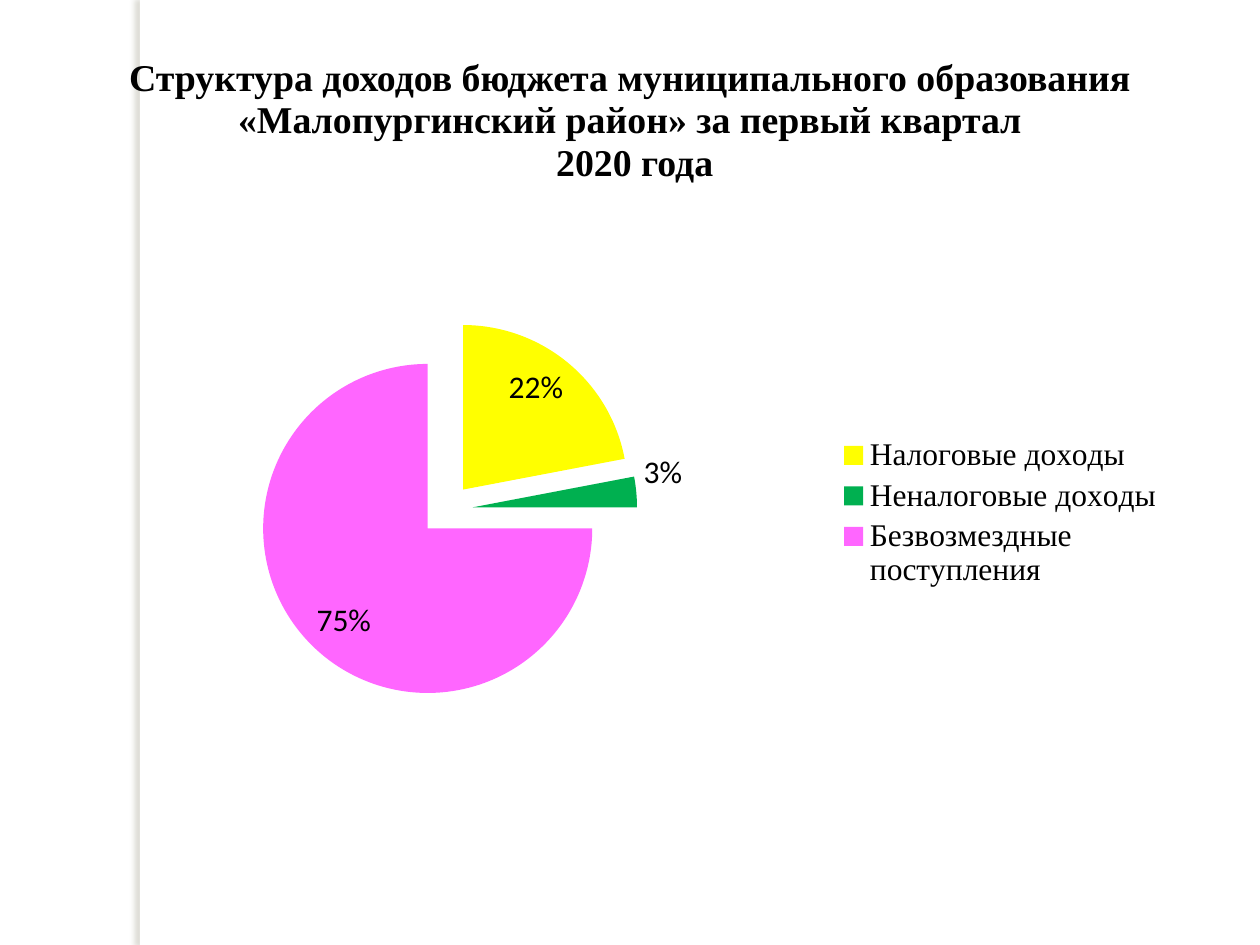
from dataclasses import dataclass

from lxml import etree
from pptx import Presentation
from pptx.chart.data import CategoryChartData
from pptx.dml.color import RGBColor
from pptx.enum.chart import XL_CHART_TYPE as ChartType
from pptx.enum.chart import XL_LABEL_POSITION as LabelPosition
from pptx.enum.chart import XL_LEGEND_POSITION as LegendPosition
from pptx.enum.shapes import MSO_SHAPE as ShapeKind
from pptx.enum.text import MSO_ANCHOR as Anchor
from pptx.enum.text import MSO_AUTO_SIZE as AutoSize
from pptx.enum.text import PP_ALIGN as Align
from pptx.oxml import parse_xml
from pptx.oxml.ns import nsdecls, qn
from pptx.util import Emu, Pt

EMU_PER_PX = 914400 / 126


def px(length):
    return Emu(round(length * EMU_PER_PX))


@dataclass(frozen=True)
class Theme:
    paper: str = "FFFFFF"
    ink: str = "000000"
    shade: str = "7F7D63"
    slices: tuple = ("FFFF00", "00B050", "FF66FF")
    heading_font: str = "Times New Roman"
    chart_font: str = "Calibri"
    title_size: float = 21.6
    chart_size: int = 18


class SlideBuilder:
    def __init__(self, slide, theme):
        self.slide = slide
        self.theme = theme

    def style_font(self, font, name, size, bold=False):
        font.name = name
        font.size = Pt(size)
        font.bold = bold
        font.color.rgb = RGBColor.from_string(self.theme.ink)

    def place(self, shape, left, top, width, height):
        shape.left, shape.top = px(left), px(top)
        shape.width, shape.height = px(width), px(height)

    def edge_strip(self, left, top, width, height):
        shapes = self.slide.shapes
        strip = shapes.add_shape(
            ShapeKind.RECTANGLE, px(left), px(top), px(width), px(height))
        strip.fill.solid()
        strip.fill.fore_color.rgb = RGBColor.from_string(self.theme.paper)
        strip.line.fill.background()
        properties = strip.element.spPr
        properties.append(parse_xml(
            f'<a:effectLst {nsdecls("a")}>'
            f'<a:outerShdw blurRad="{Pt(3)}" dist="{Pt(3)}" dir="10800000" '
            'algn="r" rotWithShape="0">'
            f'<a:srgbClr val="{self.theme.shade}"><a:alpha val="25000"/>'
            '</a:srgbClr></a:outerShdw></a:effectLst>'))
        shapes.element.insert(2, strip.element)

    def title(self, text, *box):
        title = self.slide.shapes.title
        self.place(title, *box)
        frame = title.text_frame
        frame.text = text
        frame.word_wrap = True
        frame.auto_size = AutoSize.NONE
        frame.vertical_anchor = Anchor.MIDDLE
        paragraph = frame.paragraphs[0]
        paragraph.alignment = Align.CENTER
        paragraph.line_spacing = 0.94
        self.style_font(paragraph.font, self.theme.heading_font,
                        self.theme.title_size, bold=True)

    def pie(self, shares, outside, explosion, plot_box, *box):
        data = CategoryChartData()
        data.categories = list(shares)
        data.add_series("Series 1", list(shares.values()))
        left, top, width, height = map(px, box)
        chart = self.slide.shapes.add_chart(
            ChartType.PIE, left, top, width, height, data).chart
        chart.has_title = False
        self.style_font(chart.font, self.theme.chart_font, self.theme.chart_size)
        chart.has_legend = True
        chart.legend.position = LegendPosition.RIGHT
        chart.legend.include_in_layout = False
        self.style_font(chart.legend.font, self.theme.heading_font,
                        self.theme.chart_size)

        plot = chart.plots[0]
        plot.vary_by_categories = True
        series = plot.series[0]
        for index, color in enumerate(self.theme.slices):
            fill = series.points[index].format.fill
            fill.solid()
            fill.fore_color.rgb = RGBColor.from_string(color)
        first_point = series._element.find(qn("c:dPt"))
        first_point.addprevious(parse_xml(
            f'<c:explosion {nsdecls("c")} val="{explosion}"/>'))

        labels = series.data_labels
        labels.show_value = False
        labels.show_percentage = True
        labels.number_format = "0%"
        labels.number_format_is_linked = False
        labels.position = LabelPosition.INSIDE_END
        self.style_font(labels.font, self.theme.chart_font, self.theme.chart_size)
        label = series.points[outside].data_label
        label.position = LabelPosition.OUTSIDE_END
        label_element = series._element.find(".//" + qn("c:dLbl"))
        label_element.find(qn("c:showVal")).set("val", "0")
        label_element.find(qn("c:showPercent")).set("val", "1")
        self.plot_layout(chart, plot_box)

    def plot_layout(self, chart, plot_box):
        area = chart._chartSpace.find(".//" + qn("c:plotArea"))
        for layout in area.findall(qn("c:layout")):
            area.remove(layout)
        layout = etree.Element(qn("c:layout"))
        manual = etree.SubElement(layout, qn("c:manualLayout"))
        settings = {"layoutTarget": "inner", "xMode": "edge", "yMode": "edge"}
        settings.update(zip("xywh", plot_box))
        for name, value in settings.items():
            etree.SubElement(manual, qn(f"c:{name}")).set("val", str(value))
        area.insert(0, layout)


def main():
    presentation = Presentation()
    presentation.slide_width, presentation.slide_height = px(1260), px(945)
    slide = presentation.slides.add_slide(presentation.slide_layouts[5])
    builder = SlideBuilder(slide, Theme())

    builder.edge_strip(140, 0, 10, 945)
    builder.title(
        "Структура доходов бюджета муниципального образования "
        "«Малопургинский район» за первый квартал\v 2020 года",
        63, 42, 1134, 158)
    shares = {
        "Налоговые доходы": 22,
        "Неналоговые доходы": 3,
        "Безвозмездные поступления": 75,
    }
    builder.pie(shares, 1, 16, (0.12, 0.18, 0.46, 0.63), 53, 210, 1124, 606)

    presentation.save("out.pptx")


if __name__ == "__main__":
    main()
